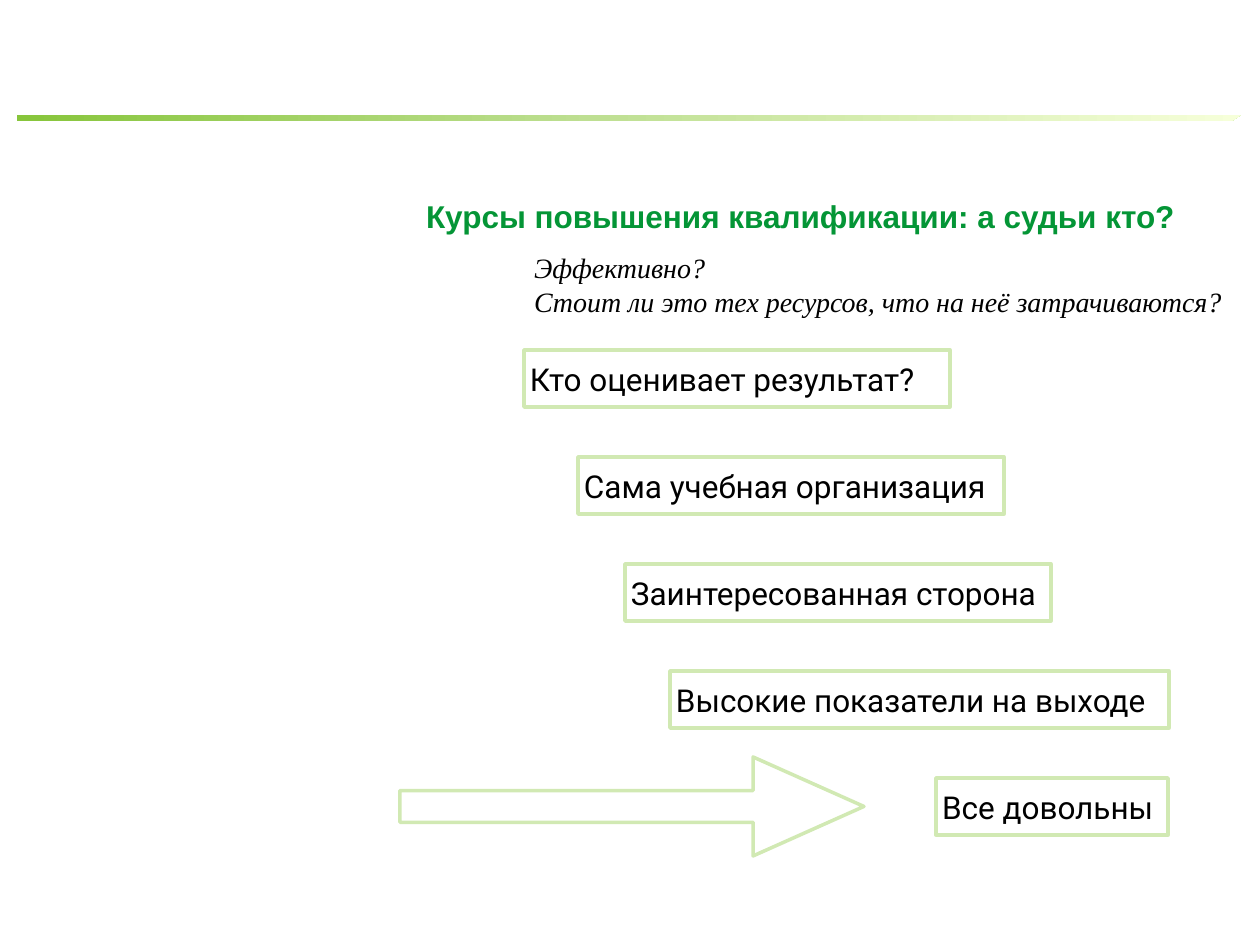
import copy
from dataclasses import dataclass

import pptx
import pptx.dml.color
import pptx.enum.shapes
import pptx.enum.text
import pptx.util

EMU_PER_PX = 914400 / 126


@dataclass(frozen=True)
class Theme:
    heading: str = "049536"
    text: str = "000000"
    paper: str = "FFFFFF"
    outline: str = "D1E9B3"
    rule: tuple = ((0, "87C53B"), (0.47, "BEDF92"), (1, "F6FFD9"))
    large: int = 18
    small: int = 16
    line: int = 2


theme = Theme()
rgb = pptx.dml.color.RGBColor.from_string


def place_text(shape, box, lines, font_name, size, color, inset=0, middle=False):
    """Position a shape (px) and fill it with left-aligned paragraphs."""
    shape.left, shape.top, shape.width, shape.height = (round(v * EMU_PER_PX) for v in box)
    frame = shape.text_frame
    frame.text = "\n".join(lines)
    frame.word_wrap = True
    frame.auto_size = pptx.enum.text.MSO_AUTO_SIZE.NONE
    anchor = pptx.enum.text.MSO_ANCHOR
    frame.vertical_anchor = anchor.MIDDLE if middle else anchor.TOP
    margin = round(inset * EMU_PER_PX)
    frame.margin_left = frame.margin_top = frame.margin_right = frame.margin_bottom = margin
    for paragraph in frame.paragraphs:
        properties = paragraph._p.get_or_add_pPr()
        properties.set("marL", "0")
        properties.set("indent", "0")
        pptx.oxml.ns  # namespace helpers used by the next line
        properties.append(pptx.oxml.parse_xml(
            f'<a:buNone {pptx.oxml.ns.nsdecls("a")}/>'))
        paragraph.alignment = pptx.enum.text.PP_ALIGN.LEFT
        paragraph.space_before = pptx.util.Pt(0)
        paragraph.font.name = font_name
        paragraph.font.size = pptx.util.Pt(size)
        paragraph.font.color.rgb = rgb(color)


def add_outlined(kind, box):
    """Add a white preset shape with a pale green outline (px)."""
    shape = slide.shapes.add_shape(kind, *(round(v * EMU_PER_PX) for v in box))
    shape.shadow.inherit = False
    shape.fill.solid()
    shape.fill.fore_color.rgb = rgb(theme.paper)
    shape.line.color.rgb = rgb(theme.outline)
    shape.line.width = pptx.util.Pt(theme.line)
    return shape


presentation = pptx.Presentation()
presentation.slide_width = round(1260 * EMU_PER_PX)
presentation.slide_height = round(945 * EMU_PER_PX)
slide = presentation.slides.add_slide(presentation.slide_layouts[1])

# Gradient rule across the top
builder = slide.shapes.build_freeform(17, 115, scale=EMU_PER_PX)
builder.add_line_segments([(1241, 115), (1232, 121), (17, 121)], close=True)
rule = builder.convert_to_shape()
rule.shadow.inherit = False
rule.line.fill.background()
rule.fill.gradient()
rule.fill.gradient_angle = 0
first_stop = rule.fill.gradient_stops[0]._gs
first_stop.addnext(copy.deepcopy(first_stop))
for stop, (position, color) in zip(rule.fill.gradient_stops, theme.rule):
    stop.position = position
    stop.color.rgb = rgb(color)

# Heading and questions
heading = slide.shapes.title
place_text(heading, (426, 197, 801, 67), ["Курсы повышения квалификации: а судьи кто?"],
           "Arial", theme.large, theme.heading)
heading.text_frame.paragraphs[0].font.bold = True

questions = slide.placeholders[1]
place_text(questions, (534, 251, 730, 78),
           ["Эффективно?", "Стоит ли это тех ресурсов, что на неё затрачиваются?"],
           "Times New Roman", theme.small, theme.text)
for paragraph in questions.text_frame.paragraphs:
    paragraph.font.italic = True

# Staircase of boxes: left, width, label
steps = [
    (524, 426, "Кто оценивает результат?"),
    (578, 426, "Сама учебная организация"),
    (625, 426, "Заинтересованная сторона"),
    (670, 499, "Высокие показатели на выходе"),
    (936, 232, "Все довольны"),
]
for index, (left, width, label) in enumerate(steps):
    box = (left, 350 + 107 * index, width, 57)
    step = add_outlined(pptx.enum.shapes.MSO_SHAPE.RECTANGLE, box)
    place_text(step, box, [label], "Roboto", theme.large, theme.text, inset=6, middle=True)

# Arrow to the last box
arrow = add_outlined(pptx.enum.shapes.MSO_SHAPE.RIGHT_ARROW, (400, 757, 464, 99))
arrow.adjustments[0] = 0.32
arrow.adjustments[1] = 1.12

presentation.save("out.pptx")
